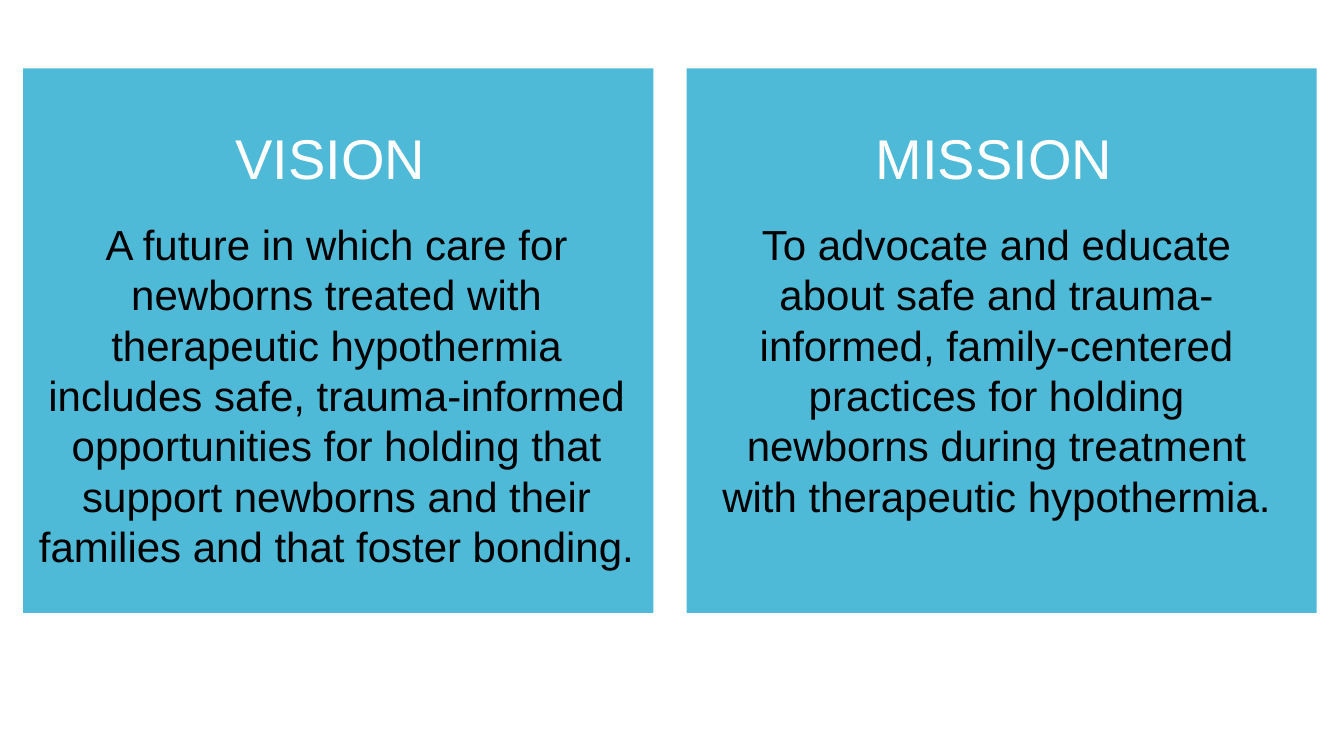
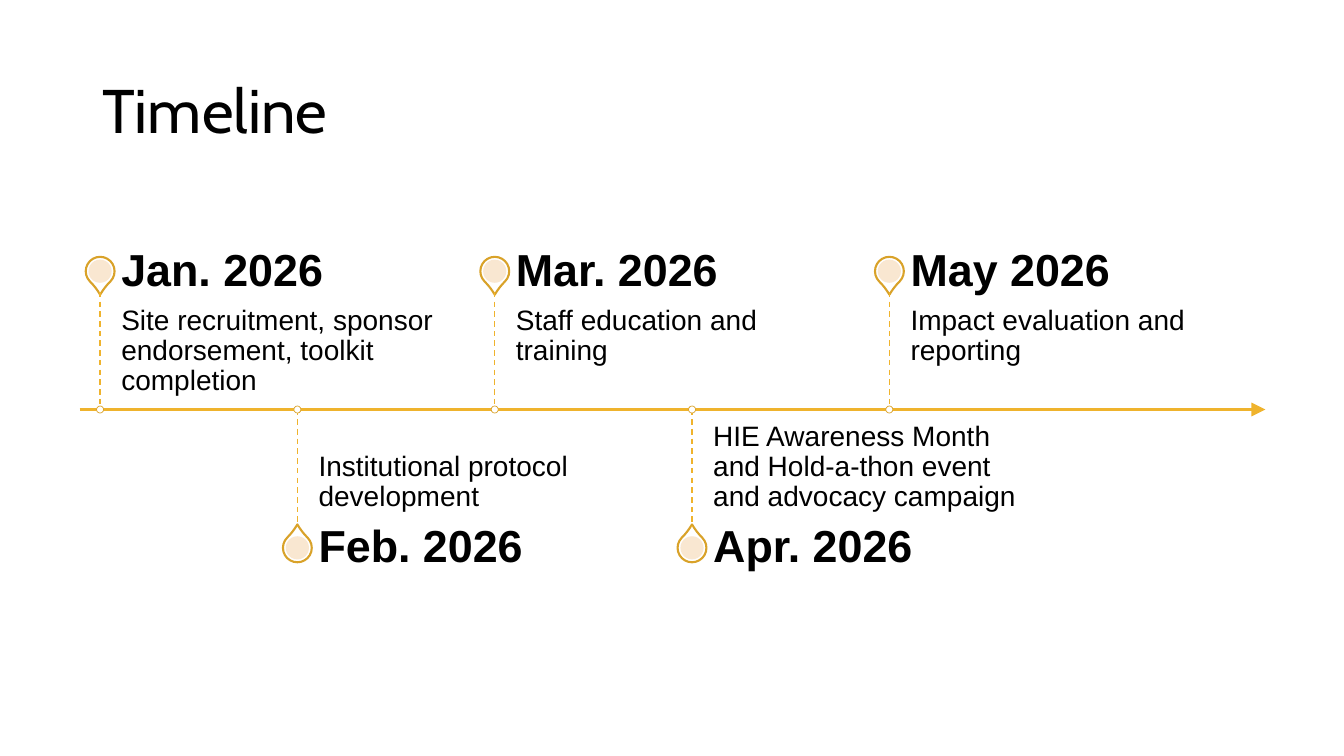
import lxml.etree
import pptx
import pptx.dml.color
import pptx.enum.dml
import pptx.enum.shapes
import pptx.enum.text
import pptx.oxml.ns
import pptx.util

RGB = pptx.dml.color.RGBColor
BLUE = RGB(0x4F, 0xBA, 0xD7)
GOLD = RGB(0xEF, 0xB3, 0x2D)
RIM = RGB(0xD9, 0xA2, 0x29)
CREAM = RGB(0xF9, 0xE5, 0xCD)
WHITE = RGB(0xFF, 0xFF, 0xFF)
BLACK = RGB(0x00, 0x00, 0x00)

SHAPE = pptx.enum.shapes.MSO_SHAPE
LINE = pptx.enum.shapes.MSO_CONNECTOR.STRAIGHT
DASH = pptx.enum.dml.MSO_LINE.DASH
ALIGN = pptx.enum.text.PP_ALIGN
ANCHOR = pptx.enum.text.MSO_ANCHOR
Pt = pptx.util.Pt
qn = pptx.oxml.ns.qn

CELL = pptx.util.Inches(0.1)
SIDES = ("margin_left", "margin_top", "margin_right", "margin_bottom")

TITLE = {
    "font": {"name": "Cabin", "size": Pt(44)}, "color": BLACK,
    "para": {"line_spacing": 0.9},
    "frame": {"vertical_anchor": ANCHOR.MIDDLE}, "pad": (1, 0.5, 1, 0.5),
}
HEAD = {
    "font": {"name": "Arial", "size": Pt(40)}, "color": WHITE,
    "para": {"alignment": ALIGN.CENTER, "line_spacing": 1.47},
    "frame": {"vertical_anchor": ANCHOR.TOP}, "pad": (0, 0, 0, 0),
}
BODY = {
    "font": {"name": "Arial", "size": Pt(30)}, "color": BLACK,
    "para": {"alignment": ALIGN.CENTER, "line_spacing": Pt(36)},
    "frame": {"vertical_anchor": ANCHOR.TOP}, "pad": (0, 0, 0, 0),
}
DATE = {
    "font": {"name": "Arial", "size": Pt(32), "bold": True}, "color": BLACK,
    "para": {"line_spacing": 0.93},
    "frame": {"vertical_anchor": ANCHOR.MIDDLE}, "pad": (0, 0, 2.2, 0),
}
ABOVE = {
    "font": {"name": "Arial", "size": Pt(20)}, "color": BLACK,
    "para": {"line_spacing": 0.9},
    "frame": {"vertical_anchor": ANCHOR.TOP}, "pad": (0, 1.4, 1.4, 2.1),
}
BELOW = {
    **ABOVE,
    "frame": {"vertical_anchor": ANCHOR.BOTTOM}, "pad": (0, 2.1, 0, 1.4),
}


def write(page, area, text, style):
    box = page.shapes.add_textbox(*(int(n * CELL) for n in area))
    frame = box.text_frame
    frame.word_wrap = True
    for side, gap in zip(SIDES, style["pad"]):
        setattr(frame, side, int(gap * CELL))
    para = frame.paragraphs[0]
    run = para.add_run()
    run.text = text
    run.font.color.rgb = style["color"]
    for part, item in (("frame", frame), ("para", para), ("font", run.font)):
        for key, value in style[part].items():
            setattr(item, key, value)


def draw(page, kind, area, fill=None, edge=None, width=1, dash=None):
    spots = [int(n * CELL) for n in area]
    if kind is LINE:
        item = page.shapes.add_connector(kind, *spots)
        lxml.etree.SubElement(item.element.spPr, qn("a:effectLst"))
    else:
        item = page.shapes.add_shape(kind, *spots)
        item.shadow.inherit = False
        item.fill.solid()
        item.fill.fore_color.rgb = fill
    if edge is None:
        item.line.fill.background()
    else:
        item.line.color.rgb = edge
        item.line.width = Pt(width)
        if dash:
            item.line.dash_style = dash
    return item


deck = pptx.Presentation()
deck.slide_width = pptx.util.Inches(13.33)
deck.slide_height = pptx.util.Inches(7.5)
blank = deck.slide_layouts[6]

goals = deck.slides.add_slide(blank)
WIDE, GAP, LEFT, TOP = 62.5, 3.3, 2.3, 6.8
panels = [
    ("VISION ", 0.8, 60.6,
     "A future in which care for newborns treated with therapeutic "
     "hypothermia includes safe, trauma-informed opportunities for holding "
     "that support newborns and their families and that foster bonding."),
    ("MISSION ", 2.7, 56.1,
     "To advocate and educate about safe and trauma-informed, "
     "family-centered practices for holding newborns during treatment "
     "with therapeutic hypothermia."),
]
for col, (head, inset, span, body) in enumerate(panels):
    left = LEFT + col * (WIDE + GAP)
    draw(goals, SHAPE.RECTANGLE, (left, TOP, WIDE, 54), BLUE)
    write(goals, (left, TOP + 2.3, WIDE, 9.4), head, HEAD)
    write(goals, (left + inset, TOP + 14.86, span, 35.3), body, BODY)

plan = deck.slides.add_slide(blank)
write(plan, (9.2, 4, 115, 14.5), "Timeline", TITLE)

COL, ROW, AXIS, START, REACH = 19.57, 11.67, 40.63, 7.9, 117.6
FIRST, LABEL = START + 2.03, 4.1
PIN, CORE, DOT = 2.86, 2.3, 0.7
axis = draw(plan, LINE, (START, AXIS, START + REACH, AXIS),
            edge=GOLD, width=1.5)
lxml.etree.SubElement(axis.line._get_or_add_ln(), qn("a:tailEnd"),
                      type="triangle", w="lg", len="lg")

steps = [
    ("Jan. 2026", "Site recruitment, sponsor endorsement, toolkit completion"),
    ("Feb. 2026", "Institutional protocol development"),
    ("Mar. 2026", "Staff education and training"),
    ("Apr. 2026",
     "HIE Awareness Month and Hold-a-thon event and advocacy campaign"),
    ("May 2026", "Impact evaluation and reporting"),
]
for col, (date, note) in enumerate(steps):
    down = col % 2
    side = 1 if down else -1
    mid = FIRST + col * COL
    end = AXIS + side * ROW
    top = min(AXIS, end)
    hub = end + side * LABEL / 2

    drop = draw(plan, SHAPE.TEAR, (mid - PIN / 2, hub - PIN / 2, PIN, PIN),
                WHITE, RIM, 1.5)
    drop.adjustments[0] = 1.15
    drop.rotation = 315 if down else 135
    core = draw(plan, SHAPE.OVAL,
                (mid - CORE / 2, hub - CORE / 2, CORE, CORE), CREAM)
    tint = core.element.spPr.find(".//" + qn("a:srgbClr"))
    lxml.etree.SubElement(tint, qn("a:alpha"), val="90000")

    write(plan, (mid + 2.1, top, 32.6, ROW), note, BELOW if down else ABOVE)
    write(plan, (mid + 2.1, hub - LABEL / 2, 32.6, LABEL), date, DATE)
    draw(plan, LINE, (mid, top, mid, top + ROW), edge=GOLD, dash=DASH)
    draw(plan, SHAPE.OVAL, (mid - DOT / 2, AXIS - DOT / 2, DOT, DOT),
         WHITE, RIM, 0.5)

deck.save("out.pptx")
